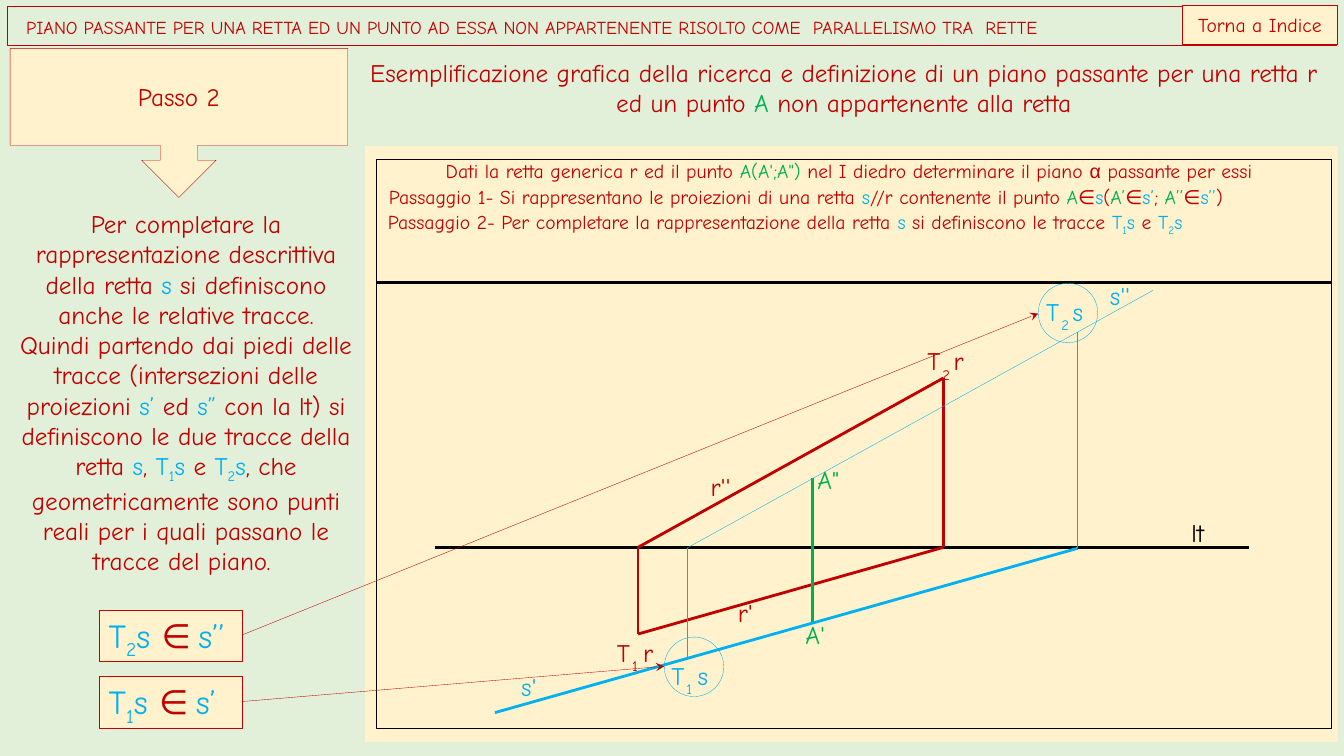
"""Build the slide on a plane through a line and a point outside it."""
from lxml.etree import SubElement
from pptx import Presentation
from pptx.dml.color import RGBColor
from pptx.enum.shapes import MSO_CONNECTOR, MSO_SHAPE
from pptx.enum.text import MSO_ANCHOR, MSO_AUTO_SIZE, PP_ALIGN
from pptx.oxml.ns import qn
from pptx.util import Emu, Pt

PX = 9144
RED, BLUE, GREEN, BLACK = "C00000", "00B0F0", "00B050", "000000"
CREAM, MINT = "FFF2CC", "E2F0D9"
FONT = "Comic Neue"

STYLES = {
    "red": (RED, FONT, 0),
    "blue": (BLUE, FONT, 0),
    "green": (GREEN, FONT, 0),
    "black": (BLACK, FONT, 0),
    "sub": (BLUE, FONT, -25000),
    "redsub": (RED, FONT, -25000),
    "greek": (RED, "Arial", 0),
    "math": (RED, "Calibri", 0),
}

TRACES = [("blue", "T"), ("sub", "1"), ("blue", "s"), ("red", " e "),
          ("blue", "T"), ("sub", "2"), ("blue", "s")]
HEADING = [("red", "PIANO PASSANTE PER UNA RETTA ED UN PUNTO AD ESSA NON APPARTENENTE "
                   "RISOLTO COME  PARALLELISMO TRA  RETTE")]
INTRO = [("red", "Esemplificazione grafica della ricerca e definizione di un piano "
                 "passante per una retta r ed un punto "),
         ("green", "A"), ("red", " non appartenente alla retta")]
GIVEN = [("red", "Dati la retta generica r ed il punto "), ("green", "A(A';A\") "),
         ("red", "nel I diedro determinare il piano "), ("greek", "α"),
         ("red", " passante per essi ")]
FIRST = [("red", "Passaggio 1- Si rappresentano le proiezioni di una retta"),
         ("blue", " s"), ("red", "//r contenente il punto "),
         ("green", "A"), ("red", "∈"), ("blue", "s"), ("red", "("),
         ("green", "A’"), ("red", "∈"), ("blue", "s’"), ("red", "; "),
         ("green", "A’’"), ("red", "∈"), ("blue", "s’’"), ("red", ")")]
SECOND = [("red", "Passaggio 2- Per completare la rappresentazione della retta "),
          ("blue", "s"), ("red", " si definiscono le tracce "), *TRACES]
STORY = [("red", "Per completare la rappresentazione descrittiva della retta "),
         ("blue", "s"),
         ("red", " si definiscono anche le relative tracce. Quindi partendo dai piedi "
                 "delle tracce (intersezioni delle proiezioni "),
         ("blue", "s’ "), ("red", "ed "), ("blue", "s” "),
         ("red", "con la lt) si definiscono le due tracce della retta "),
         ("blue", "s"), ("red", ", "), *TRACES,
         ("red", ", che geometricamente sono punti reali per i quali passano le "
                 "tracce del piano. ")]

TEXTS = [
    (INTRO, (345, 52, 984, 71), 18, True),
    (FIRST, (376, 179, 952, 34), 14, False),
    (SECOND, (375, 203, 952, 34), 14, False),
    (STORY, (10, 202, 349, 404), 18, True),
]
LABELS = [
    ("lt", "black", 1182, 513, 30),
    ("A'", "green", 799, 614, 28),
    ('A"', "green", 811, 461, 29),
    ("r'", "red", 732, 593, 22),
    ("r''", "red", 705, 468, 32),
    ("s'", "blue", 517, 666, 22),
    ("s''", "blue", 1101, 278, 32),
]
POINTS = [("1", "r", "red", 612, 632), ("2", "r", "red", 920, 343),
          ("1", "s", "blue", 666, 655), ("2", "s", "blue", 1038, 294)]
LINES = [
    (374, 280, 1321, 280, BLACK, 0),
    (432, 543, 1239, 543, BLACK, 0),
    (633, 543, 936, 375, RED, 0),
    (633, 629, 936, 543, RED, 0),
    (633, 543, 633, 629, RED, 0),
    (936, 543, 936, 375, RED, 0),
    (806, 474, 806, 618, GREEN, 0),
    (681, 544, 1144, 288, BLUE, 0.25),
    (491, 707, 1069, 544, BLUE, 0),
    (1069, 544, 1069, 329, BLUE, 0.25),
    (682, 544, 682, 654, BLUE, 0.25),
]
RINGS = [(659, 632), (1030, 281)]
ARROWS = [(240, 630, 1030, 311), (240, 696, 659, 661)]
CHECKS = [("1", "s’", 671), ("2", "s’’", 605)]

deck = Presentation()
deck.slide_width, deck.slide_height = Emu(12192000), Emu(6858000)
slide = deck.slides.add_slide(deck.slide_layouts[6])
shapes = slide.shapes


def color(code):
    return RGBColor.from_string(code)


def scale(*sizes):
    return [Emu(size * PX) for size in sizes]


def write(shape, runs, size, center=False, middle=False):
    frame = shape.text_frame
    frame.word_wrap = True
    frame.vertical_anchor = MSO_ANCHOR.MIDDLE if middle else MSO_ANCHOR.TOP
    para = frame.paragraphs[0]
    para.alignment = PP_ALIGN.CENTER if center else PP_ALIGN.LEFT
    for key, text in runs:
        code, face, base = STYLES[key]
        run = para.add_run()
        run.text = text
        run.font.size, run.font.name = Pt(size), face
        run.font.color.rgb = color(code)
        if base:
            run.font._element.set("baseline", str(base))
    return frame


def draw(kind, box, fill=None, line=None, width=0.25):
    shape = shapes.add_shape(kind, *scale(*box))
    shape.shadow.inherit = False
    if fill:
        shape.fill.solid()
        shape.fill.fore_color.rgb = color(fill)
    else:
        shape.fill.background()
    if line:
        shape.line.color.rgb = color(line)
        shape.line.width = Pt(width)
    else:
        shape.line.fill.background()
    return shape


def note(runs, box, size, center=False, bare=False):
    frame = write(shapes.add_textbox(*scale(*box)), runs, size, center)
    frame.auto_size = MSO_AUTO_SIZE.SHAPE_TO_FIT_TEXT
    if bare:
        frame.margin_left = frame.margin_right = 0
        frame.margin_top = frame.margin_bottom = 0
    return frame


def label(key, text, x, y, wide, tall=30):
    note([(key, text)], (x, y, wide, tall), 18, bare=True).word_wrap = False


def link(x1, y1, x2, y2, code, width, head=False):
    line = shapes.add_connector(MSO_CONNECTOR.STRAIGHT, *scale(x1, y1, x2, y2))
    line.line.color.rgb = color(code)
    line.line.width = Pt(width)
    if head:
        SubElement(line.line._get_or_add_ln(), qn("a:tailEnd"), type="stealth")
    SubElement(line._element.spPr, qn("a:effectLst"))


def main():
    slide.background.fill.solid()
    slide.background.fill.fore_color.rgb = color(MINT)

    step = draw(MSO_SHAPE.DOWN_ARROW_CALLOUT, (10, 48, 335, 148), CREAM, RED)
    write(step, [("red", "Passo 2")], 18, True, True)
    bar = draw(MSO_SHAPE.RECTANGLE, (7, 6, 1319, 39), None, RED)
    frame = write(bar, HEADING, 13, middle=True)
    frame.margin_left, frame.margin_top = scale(19, 8)
    back = draw(MSO_SHAPE.RECTANGLE, (1173, 5, 154, 39), CREAM, RED)
    write(back, [("red", "Torna a Indice")], 14, True, True)
    draw(MSO_SHAPE.RECTANGLE, (362, 145, 965, 591), CREAM)
    draw(MSO_SHAPE.RECTANGLE, (374, 158, 947, 565), None, BLACK, 0)

    for line in LINES:
        link(*line)
    note(GIVEN, (372, 158, 947, 24), 14, True, True)
    for text in TEXTS:
        note(*text)
    for text, key, x, y, wide in LABELS:
        label(key, text, x, y, wide)
    for digit, name, key, x, y in POINTS:
        label(key, "T", x, y, 17)
        label("sub" if key == "blue" else "redsub", digit, x + 15, y + 3, 9, 20)
        label(key, name, x + 26, y, 12)

    for digit, name, top in CHECKS:
        box = draw(MSO_SHAPE.RECTANGLE, (98, top, 142, 51), CREAM, RED)
        write(box, [("blue", "T"), ("sub", digit), ("blue", "s "),
                    ("math", "∈ "), ("blue", name)], 24)
    for x, y in RINGS:
        draw(MSO_SHAPE.OVAL, (x, y, 59, 59), None, BLUE)
    for ends in ARROWS:
        link(*ends, RED, 0.25, True)
    deck.save("out.pptx")


if __name__ == "__main__":
    main()
